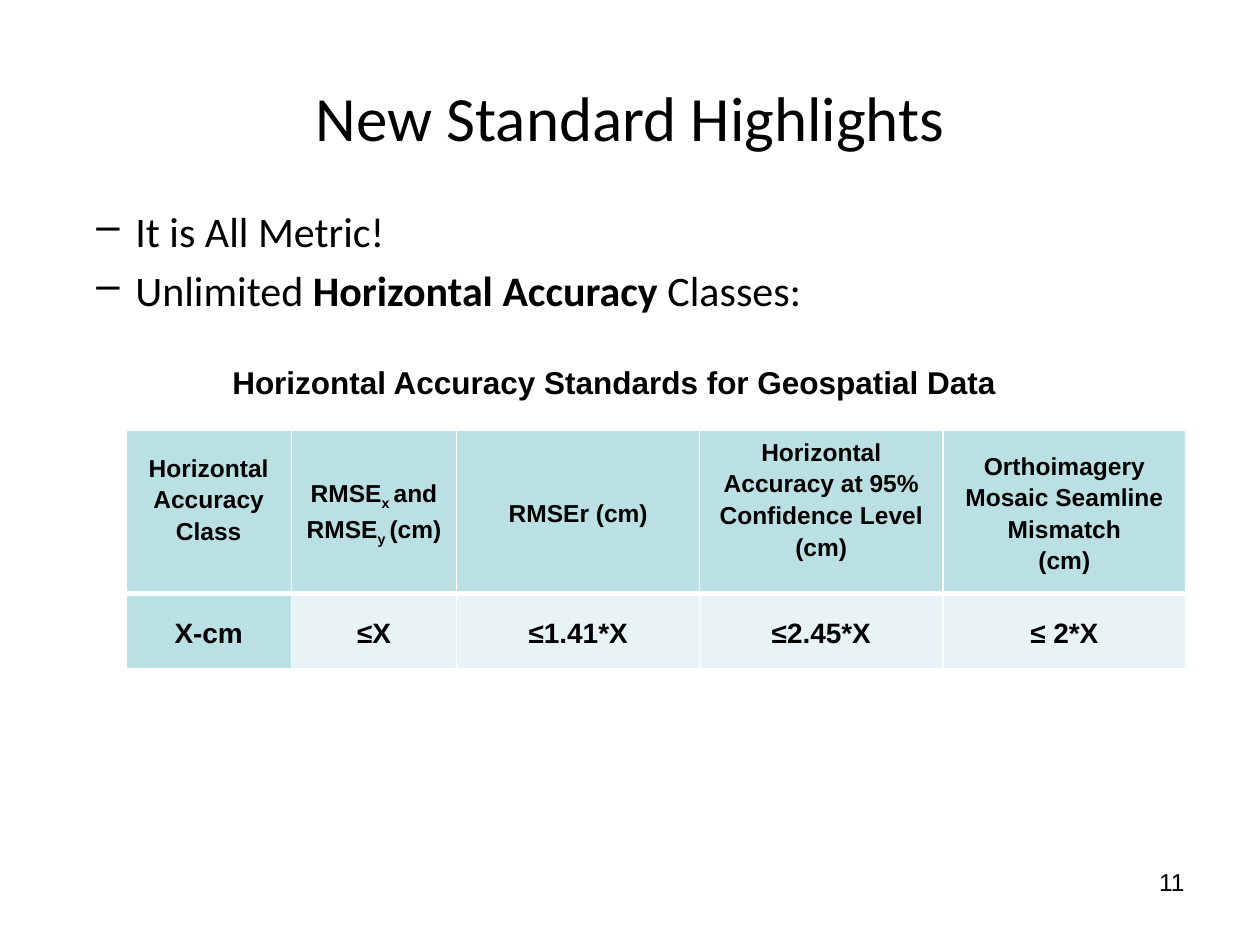
from pptx import Presentation, util as u
from pptx.dml.color import RGBColor
from pptx.enum import text as t
from pptx.oxml.ns import qn
from lxml import etree

COLORS = {"text": "000000", "line": "FFFFFF", "strong": "BBE0E3", "pale": "E7F3F4"}
COLUMNS, ROWS = 120, 90
CENTER, RIGHT = t.PP_ALIGN.CENTER, t.PP_ALIGN.RIGHT
MIDDLE = t.MSO_ANCHOR.MIDDLE


def color(name):
    return RGBColor.from_string(COLORS[name])


def write(paragraph, content, size=14, font="Arial", bold=False, align=None,
          spacing=None, before=None, bullet=None):
    if bullet:
        properties = paragraph._p.get_or_add_pPr()
        properties.set("marL", str(u.Inches(0.81)))
        properties.set("indent", str(u.Inches(-0.31)))
        etree.SubElement(properties, qn("a:buChar")).set("char", bullet)
    if align is not None:
        paragraph.alignment = align
    if spacing:
        paragraph.line_spacing = spacing
    if before:
        paragraph.space_before = u.Pt(before)
    pieces = [(content, "")] if isinstance(content, str) else content
    for words, mark in pieces:
        run = paragraph.add_run()
        run.text = words
        run.font.size = u.Pt(size)
        run.font.name = font
        run.font.bold = bold or mark == "bold"
        run.font.color.rgb = color("text")
        if mark == "sub":
            run._r.get_or_add_rPr().set("baseline", "-25000")


class Deck:
    def __init__(self):
        self.presentation = Presentation()
        self.presentation.slide_width = u.Inches(10)
        self.presentation.slide_height = u.Inches(7.5)
        self.slide = self.presentation.slides.add_slide(self.presentation.slide_layouts[6])

    def across(self, columns):
        return int(self.presentation.slide_width * columns / COLUMNS)

    def down(self, rows):
        return int(self.presentation.slide_height * rows / ROWS)

    def place(self, left, top, width, height):
        return self.across(left), self.down(top), self.across(width), self.down(height)

    def fill_frame(self, frame, contents, before=None, **style):
        for index, content in enumerate(contents):
            paragraph = frame.add_paragraph() if index else frame.paragraphs[0]
            write(paragraph, content, before=before if index else None, **style)

    def text(self, area, contents, anchor=t.MSO_ANCHOR.TOP, **style):
        frame = self.slide.shapes.add_textbox(*self.place(*area)).text_frame
        frame.word_wrap = True
        frame.vertical_anchor = anchor
        self.fill_frame(frame, contents, **style)

    def border(self, cell, widths):
        properties = cell._tc.get_or_add_tcPr()
        for side, width in widths.items():
            line = etree.SubElement(properties, qn("a:ln" + side), w=str(u.Pt(width)))
            fill = etree.SubElement(line, qn("a:solidFill"))
            etree.SubElement(fill, qn("a:srgbClr"), val=COLORS["line"])

    def table(self, area, widths, heights, rows, raised=()):
        table = self.slide.shapes.add_table(len(rows), len(widths), *self.place(*area)).table
        for column, width in zip(table.columns, widths):
            column.width = self.across(width)
        for row, height in zip(table.rows, heights):
            row.height = self.down(height)
        for r, row in enumerate(rows):
            for c, contents in enumerate(row):
                cell = table.cell(r, c)
                cell.margin_left = cell.margin_right = u.Inches(0.07)
                cell.margin_top = 0
                cell.margin_bottom = u.Inches(0.22 if (r, c) in raised else 0)
                cell.vertical_anchor = MIDDLE
                self.border(cell, {"L": 1, "R": 1, "T": 3 if r else 1, "B": 1 if r else 3})
                cell.fill.solid()
                cell.fill.fore_color.rgb = color("pale" if r and c else "strong")
                self.fill_frame(cell.text_frame, contents, size=16 if r else 14,
                                bold=True, align=CENTER, spacing=1.15)


def main():
    deck = Deck()
    deck.text((6, 3.6, 108, 15), ["New Standard Highlights"], anchor=MIDDLE,
              size=36, font="Calibri", align=CENTER)
    deck.text((2, 19, 115, 63), [
        "It is All Metric!",
        [("Unlimited ", ""), ("Horizontal Accuracy ", "bold"), ("Classes:", "")],
    ], size=24, font="Calibri", bullet="–", before=4.8)
    deck.text((86, 82, 28, 6.2), ["11"], align=RIGHT)
    header = [
        ["Horizontal Accuracy Class"],
        [[("RMSE", ""), ("x ", "sub"), ("and RMSE", ""), ("y ", "sub"), ("(cm)", "")]],
        ["RMSEr (cm)"],
        ["Horizontal Accuracy at 95% Confidence Level (cm)"],
        ["Orthoimagery Mosaic Seamline Mismatch", "(cm)"],
    ]
    limits = [[value] for value in ("X-cm", "≤X", "≤1.41*X", "≤2.45*X", "≤ 2*X")]
    deck.table((12, 41, 101, 22.1), [15.75] * 2 + [23.15] * 3, [14.9, 7.2],
               [header, limits], raised={(0, 0), (0, 3)})
    deck.text((14, 34, 89, 4.8), ["Horizontal Accuracy Standards for Geospatial Data"],
              anchor=MIDDLE, size=18, bold=True, align=CENTER)
    deck.presentation.save("out.pptx")


if __name__ == "__main__":
    main()
